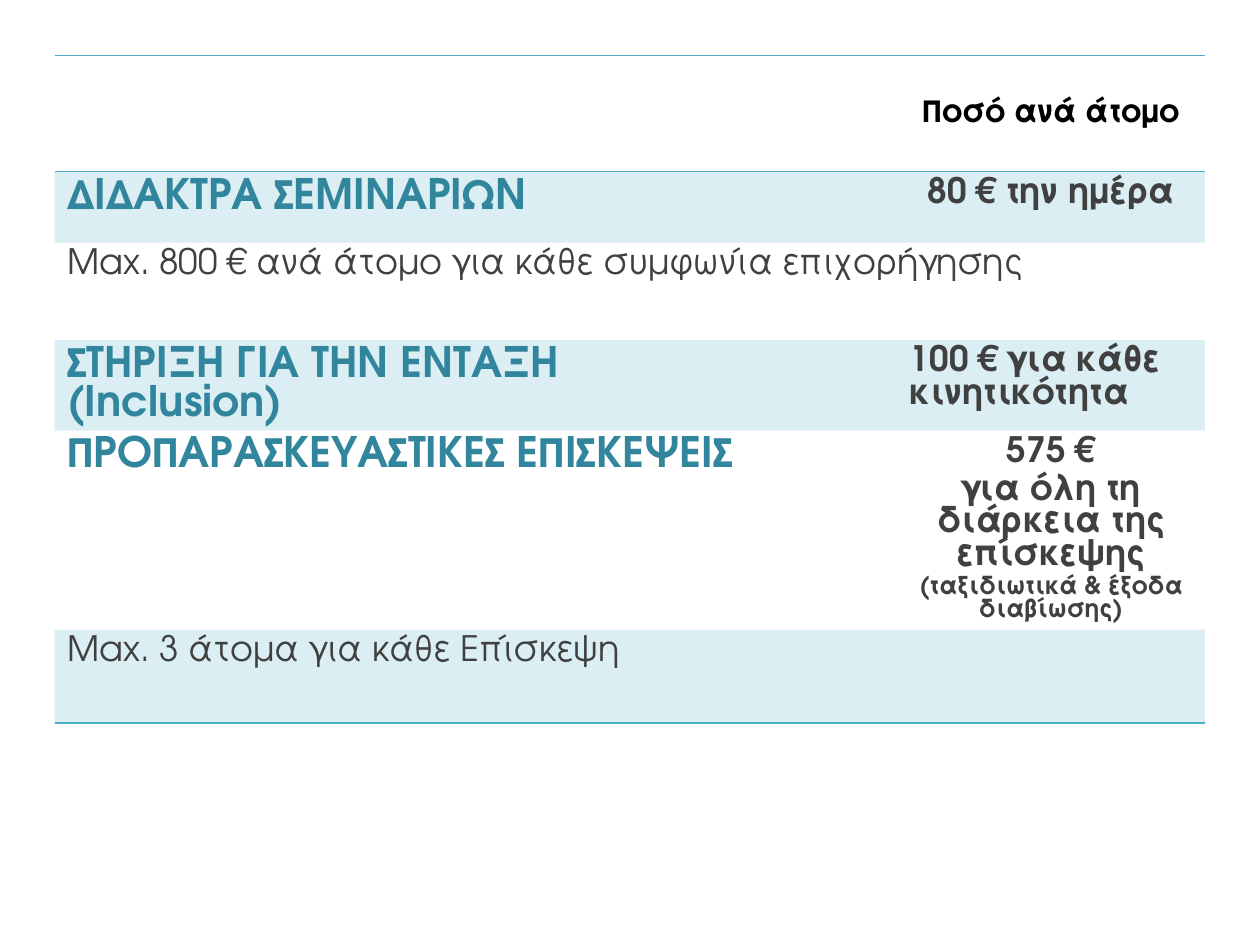
from lxml import etree
from pptx import Presentation
from pptx.dml.color import RGBColor
from pptx.enum.text import MSO_ANCHOR, PP_ALIGN
from pptx.oxml.ns import qn
from pptx.util import Cm, Pt

LEFT, CENTER = PP_ALIGN.LEFT, PP_ALIGN.CENTER
MIDDLE = MSO_ANCHOR.MIDDLE
FONT = "TeX Gyre Adventor"
BLACK, GREY, TEAL, AQUA = "000000", "404040", "31859C", "4BACC6"
PLAIN_TABLE_STYLE = "{2D5ABB26-0587-4C30-8999-92F81FD0307C}"

COLUMN_WIDTHS = [16.99, 6.2]
ROW_HEIGHTS = [2.34, 1.43, 1.96, 1.83, 4.01, 1.88]
BANDED_ROWS = (1, 3, 5)
RULED_EDGES = {0: ("lnT", "lnB"), 5: ("lnB",)}

HEADER = (18, BLACK, True, CENTER)
TOPIC = (24, TEAL, True, LEFT)
LIMIT = (20, GREY, False, LEFT)
AMOUNT = (20, GREY, True, CENTER)
AMOUNT_LEFT = (20, GREY, True, LEFT)
DETAIL = (14, GREY, True, CENTER)

ROWS = [
    ([], [("Ποσό ανά άτομο", HEADER)]),
    ([("ΔΙΔΑΚΤΡΑ ΣΕΜΙΝΑΡΙΩΝ", TOPIC)], [("80 € την ημέρα", AMOUNT)]),
    ([("Max. 800 € ανά άτομο για κάθε συμφωνία επιχορήγησης", LIMIT)], []),
    ([("ΣΤΗΡΙΞΗ ΓΙΑ ΤΗΝ ΕΝΤΑΞΗ", TOPIC), ("(Inclusion)", TOPIC)],
     [("100 € για κάθε κινητικότητα", AMOUNT_LEFT)]),
    ([("ΠΡΟΠΑΡΑΣΚΕΥΑΣΤΙΚΕΣ ΕΠΙΣΚΕΨΕΙΣ", TOPIC)],
     [("575 €", AMOUNT),
      ("για όλη τη διάρκεια της επίσκεψης", AMOUNT),
      ("(ταξιδιωτικά & έξοδα διαβίωσης)", DETAIL)]),
    ([("Max. 3 άτομα για κάθε Επίσκεψη", LIMIT)], []),
]


def color(hex_value):
    """Return the colour for a hex string."""
    return RGBColor.from_string(hex_value)


def write_cell(cell, lines):
    """Write styled paragraphs into a cell."""
    frame = cell.text_frame
    for index, (text, (size, hex_value, bold, alignment)) in enumerate(lines):
        paragraph = frame.add_paragraph() if index else frame.paragraphs[0]
        paragraph.text = text
        paragraph.alignment = alignment
        if index and alignment == CENTER:
            paragraph.space_before = Pt(3)
        paragraph.font.name = FONT
        paragraph.font.size = Pt(size)
        paragraph.font.bold = bold
        paragraph.font.color.rgb = color(hex_value)


def fill_cell(cell, banded):
    """Give a cell a translucent band or no fill."""
    if not banded:
        cell.fill.background()
        return
    cell.fill.solid()
    cell.fill.fore_color.rgb = color(AQUA)
    swatch = cell._tc.tcPr.find(qn("a:solidFill")).find(qn("a:srgbClr"))
    etree.SubElement(swatch, qn("a:alpha"), val="20000")


def rule_cell(cell, edges):
    """Draw a thin line on the named edges of a cell."""
    properties = cell._tc.get_or_add_tcPr()
    for position, edge in enumerate(edges):
        line = etree.Element(qn(f"a:{edge}"), w=str(Pt(1)))
        fill = etree.SubElement(line, qn("a:solidFill"))
        etree.SubElement(fill, qn("a:srgbClr"), val=AQUA)
        properties.insert(position, line)


def add_grant_table(slide, left, top):
    """Place the table of grant amounts at the given corner."""
    table = slide.shapes.add_table(
        len(ROWS), len(COLUMN_WIDTHS), Cm(left), Cm(top),
        Cm(sum(COLUMN_WIDTHS)), Cm(sum(ROW_HEIGHTS))).table
    table._tbl.tblPr.find(qn("a:tableStyleId")).text = PLAIN_TABLE_STYLE
    table.horz_banding = False
    for column, width in zip(table.columns, COLUMN_WIDTHS):
        column.width = Cm(width)
    for row, height in zip(table.rows, ROW_HEIGHTS):
        row.height = Cm(height)
    for row_index, contents in enumerate(ROWS):
        for column_index, lines in enumerate(contents):
            cell = table.cell(row_index, column_index)
            write_cell(cell, lines)
            fill_cell(cell, row_index in BANDED_ROWS)
            rule_cell(cell, RULED_EDGES.get(row_index, ()))
    table.cell(0, 1).vertical_anchor = MIDDLE
    table.cell(2, 0).merge(table.cell(2, 1))


def main():
    """Build and save the presentation."""
    presentation = Presentation()
    presentation.slide_width, presentation.slide_height = Cm(25.4), Cm(19.05)
    slide = presentation.slides.add_slide(presentation.slide_layouts[6])
    add_grant_table(slide, 1.1, 1.12)
    presentation.save("out.pptx")


if __name__ == "__main__":
    main()
